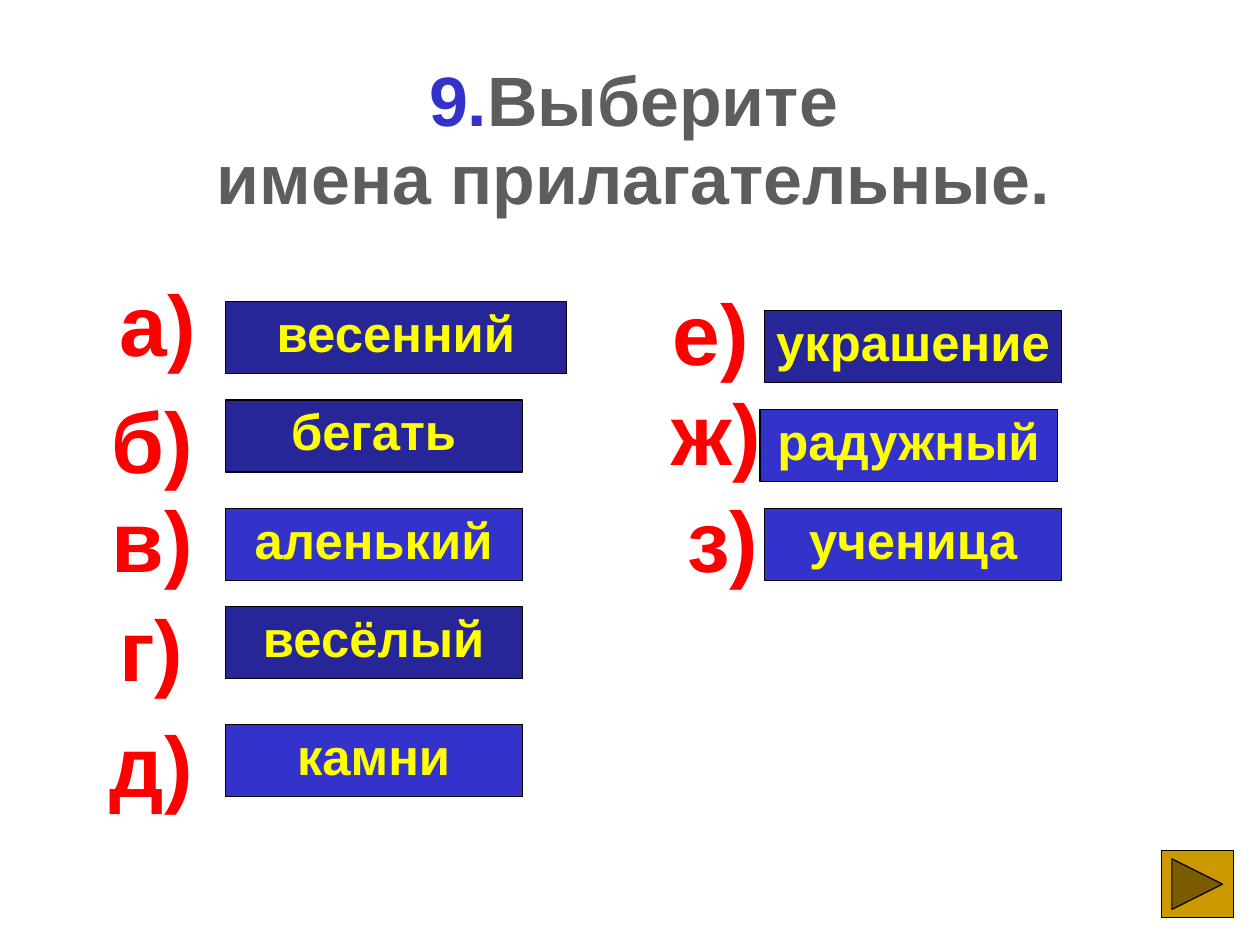
from pptx import Presentation
from pptx.dml.color import RGBColor
from pptx.enum.shapes import MSO_SHAPE
from pptx.enum.text import MSO_ANCHOR, PP_ALIGN
from pptx.util import Cm, Inches, Pt

COLORS = {
    "navy": "262699",
    "blue": "3333CC",
    "red": "FF0000",
    "yellow": "FFFF00",
    "gray": "5D5D5D",
    "gold": "CC9900",
    "black": "000000",
}

LETTER_HEIGHT = 0.95
WORD_HEIGHT = 0.63
WORD_WIDTH = 2.6

ANSWERS = [
    ("а)", 0.94, 2.4, 0.88, "весенний", 1.97, 2.64, 2.99, "navy"),
    ("б)", 0.87, 3.42, 0.92, "бегать", 1.97, 3.5, WORD_WIDTH, "navy"),
    ("в)", 0.87, 4.29, 0.92, "аленький", 1.97, 4.45, WORD_WIDTH, "blue"),
    ("г)", 0.94, 5.24, 0.77, "весёлый", 1.97, 5.31, WORD_WIDTH, "navy"),
    ("д)", 0.86, 6.26, 0.93, "камни", 1.97, 6.34, WORD_WIDTH, "blue"),
    ("е)", 5.78, 2.48, 0.88, "украшение", 6.69, 2.72, WORD_WIDTH, "navy"),
    ("ж)", 5.77, 3.35, 0.99, "радужный", 6.65, 3.58, WORD_WIDTH, "blue"),
    ("з)", 5.91, 4.29, 0.83, "ученица", 6.69, 4.45, WORD_WIDTH, "blue"),
]


class QuizSlide:
    font_name = "Arial"
    line_spacing = 0.93

    def __init__(self, presentation):
        self.slide = presentation.slides.add_slide(presentation.slide_layouts[5])

    def color(self, name):
        return RGBColor.from_string(COLORS[name])

    def style(self, frame, size, color):
        frame.word_wrap = False
        frame.vertical_anchor = MSO_ANCHOR.TOP
        for paragraph in frame.paragraphs:
            paragraph.alignment = PP_ALIGN.CENTER
            paragraph.line_spacing = self.line_spacing
            for run in paragraph.runs:
                run.font.name = self.font_name
                run.font.size = Pt(size)
                run.font.bold = True
                run.font.color.rgb = self.color(color)

    def title(self, number, first_line, second_line):
        heading = self.slide.shapes.title
        heading.left, heading.top = Inches(1.76), Inches(0.51)
        heading.width, heading.height = Inches(7.57), Inches(1.48)
        frame = heading.text_frame
        frame.text = number
        frame.paragraphs[0].add_run().text = first_line
        frame.add_paragraph().text = second_line
        self.style(frame, 44, "gray")
        frame.paragraphs[0].runs[0].font.color.rgb = self.color("blue")

    def letter(self, text, left, top, width):
        label = self.slide.shapes.add_textbox(
            Inches(left), Inches(top), Inches(width), Inches(LETTER_HEIGHT)
        )
        label.text_frame.text = text
        self.style(label.text_frame, 54, "red")

    def block(self, kind, left, top, width, height, fill):
        block = self.slide.shapes.add_shape(
            kind, Inches(left), Inches(top), Inches(width), Inches(height)
        )
        block.shadow.inherit = False
        block.fill.solid()
        block.fill.fore_color.rgb = self.color(fill)
        block.line.color.rgb = self.color("black")
        block.line.width = Pt(0.75)
        return block

    def word(self, text, left, top, width, fill):
        card = self.block(MSO_SHAPE.RECTANGLE, left, top, width, WORD_HEIGHT, fill)
        card.text_frame.text = text
        self.style(card.text_frame, 32, "yellow")

    def next_button(self, left, top, width, height):
        self.block(
            MSO_SHAPE.ACTION_BUTTON_FORWARD_OR_NEXT, left, top, width, height, "gold"
        )


def main():
    presentation = Presentation()
    presentation.slide_width = Cm(28)
    presentation.slide_height = Cm(21)

    quiz = QuizSlide(presentation)
    quiz.title("9.", "Выберите", "имена прилагательные.")
    for letter, x, y, width, word, word_x, word_y, word_width, fill in ANSWERS:
        quiz.letter(letter, x, y, width)
        quiz.word(word, word_x, word_y, word_width, fill)
    quiz.next_button(10.16, 7.44, 0.63, 0.59)

    presentation.save("out.pptx")


if __name__ == "__main__":
    main()
